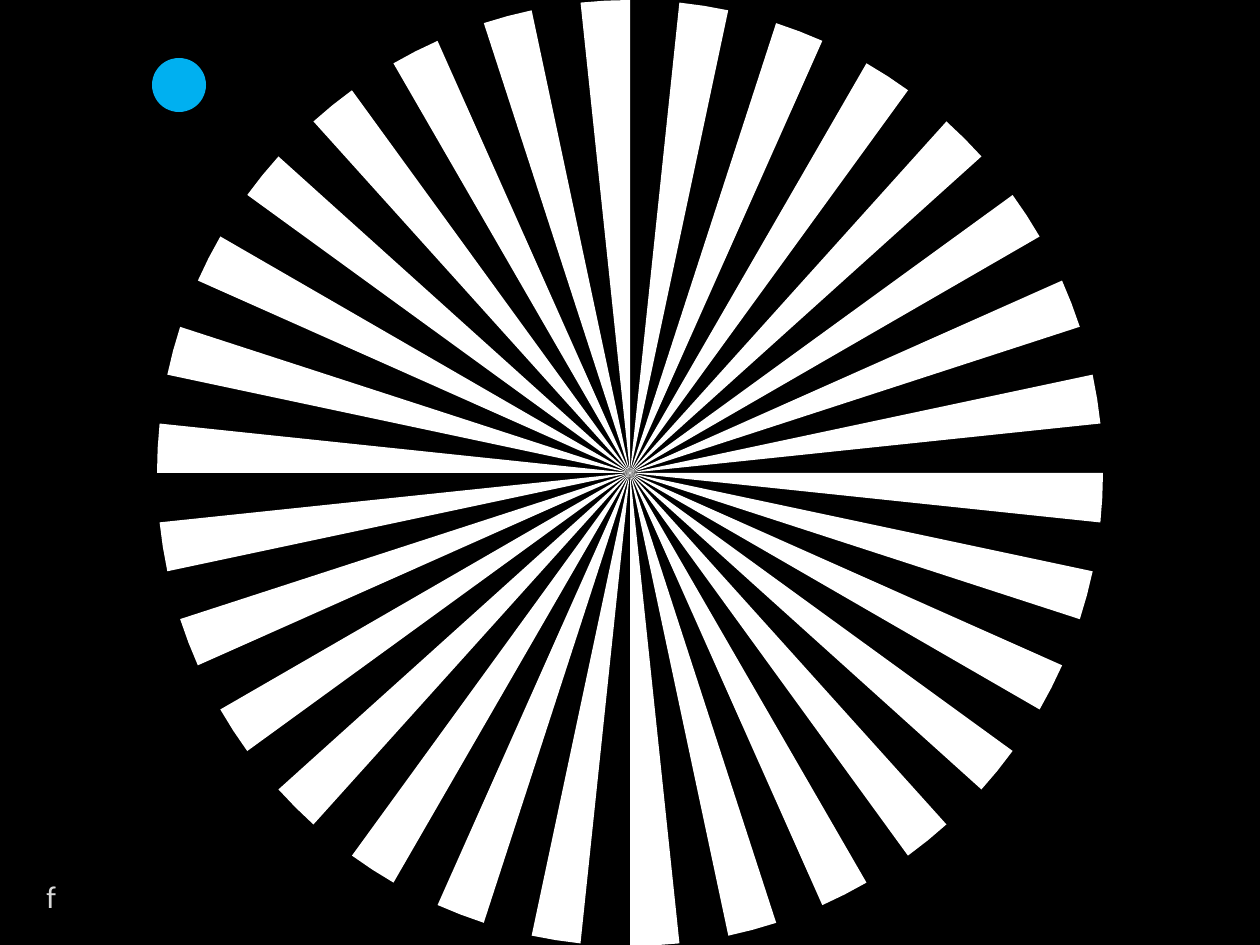
from math import cos, radians, sin

from pptx import Presentation
from pptx.dml.color import RGBColor
from pptx.enum.shapes import MSO_SHAPE as Preset
from pptx.enum.text import MSO_AUTO_SIZE as AutoSize
from pptx.util import Emu, Pt

PX = 914400 / 126


def px(length):
    return Emu(round(length * PX))


def color(hex_value):
    return RGBColor.from_string(hex_value)


def apply_format(target, values):
    for attribute, value in values.items():
        setattr(target, attribute, value)


class SlideBuilder:
    """Holds the style and the current slide, and draws its elements."""

    background = "000000"
    ray_color = "FFFFFF"
    dot_color = "00B0F0"
    letter_color = "D9D9D9"
    letter_font = {"name": "Calibri", "size": Pt(18)}
    letter_frame = {"word_wrap": False, "auto_size": AutoSize.SHAPE_TO_FIT_TEXT}

    def __init__(self, presentation):
        self.slide = presentation.slides.add_slide(presentation.slide_layouts[6])
        self.paint(self.slide.background.fill, self.background)

    def paint(self, fill, hex_value):
        fill.solid()
        fill.fore_color.rgb = color(hex_value)

    def finish(self, shape, hex_value):
        shape.shadow.inherit = False
        self.paint(shape.fill, hex_value)
        shape.line.fill.background()

    def sunburst(self, center_x, center_y, radius, rays):
        wheel = self.slide.shapes.add_group_shape()
        step = 360 / rays
        for ray in range(rays):
            start = -ray * step
            rim = [
                (px(center_x + radius * cos(angle)), px(center_y + radius * sin(angle)))
                for angle in (radians(start + step * part) for part in (0, 0.25, 0.5))
            ]
            outline = wheel.shapes.build_freeform(px(center_x), px(center_y))
            outline.add_line_segments(rim, close=True)
            self.finish(outline.convert_to_shape(), self.ray_color)

    def dot(self, left, top, diameter):
        circle = self.slide.shapes.add_shape(
            Preset.OVAL, px(left), px(top), px(diameter), px(diameter)
        )
        self.finish(circle, self.dot_color)

    def letter(self, text, left, top, width, height):
        label = self.slide.shapes.add_textbox(px(left), px(top), px(width), px(height))
        apply_format(label.text_frame, self.letter_frame)
        run = label.text_frame.paragraphs[0].add_run()
        run.text = text
        apply_format(run.font, self.letter_font)
        run.font.color.rgb = color(self.letter_color)


def main():
    presentation = Presentation()
    apply_format(presentation, {"slide_width": px(1260), "slide_height": px(945)})
    builder = SlideBuilder(presentation)
    builder.sunburst(center_x=630, center_y=473, radius=473, rays=30)
    builder.dot(152, 58, 54)
    builder.letter("f", 34, 871, 35, 50)
    presentation.save("out.pptx")


if __name__ == "__main__":
    main()
